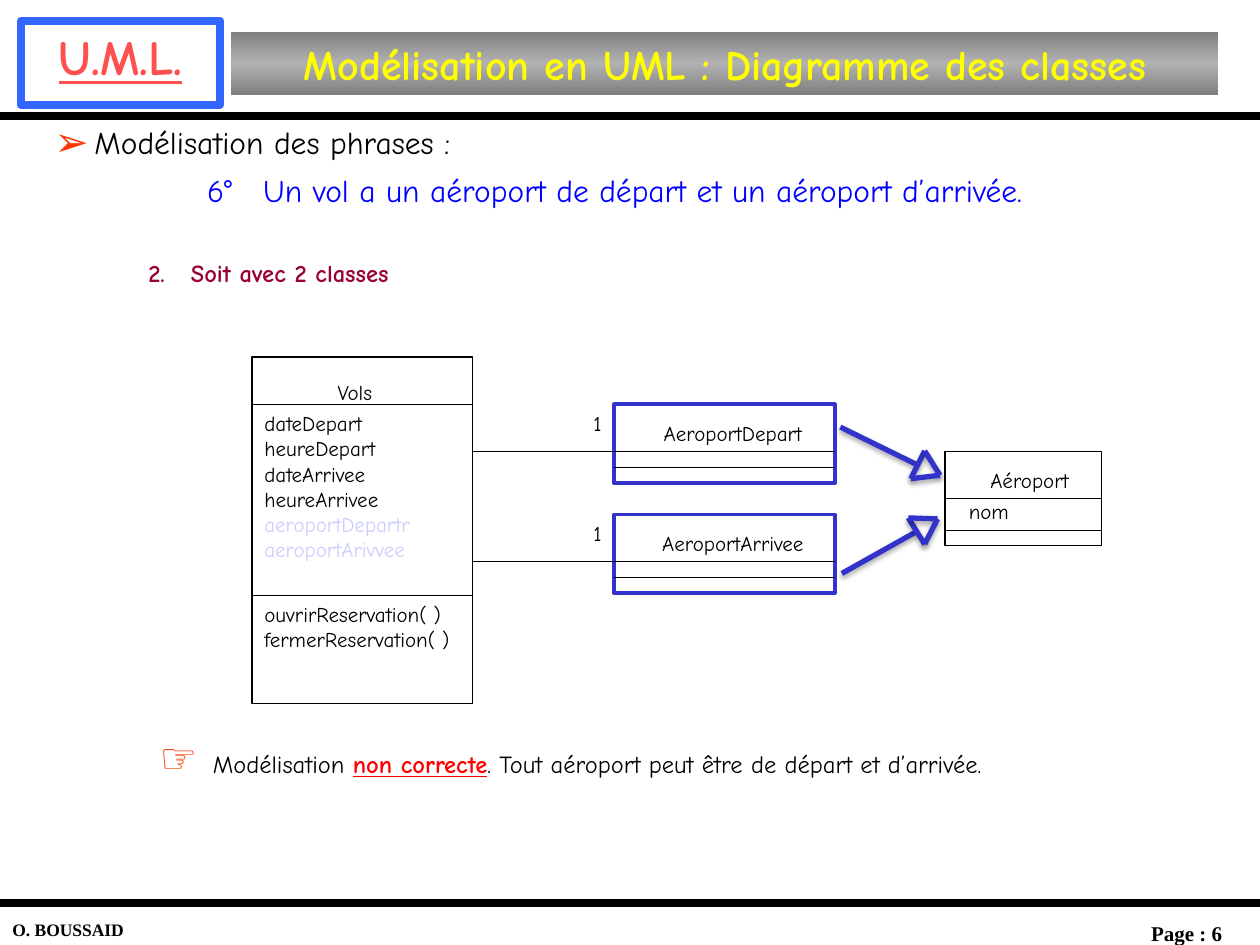
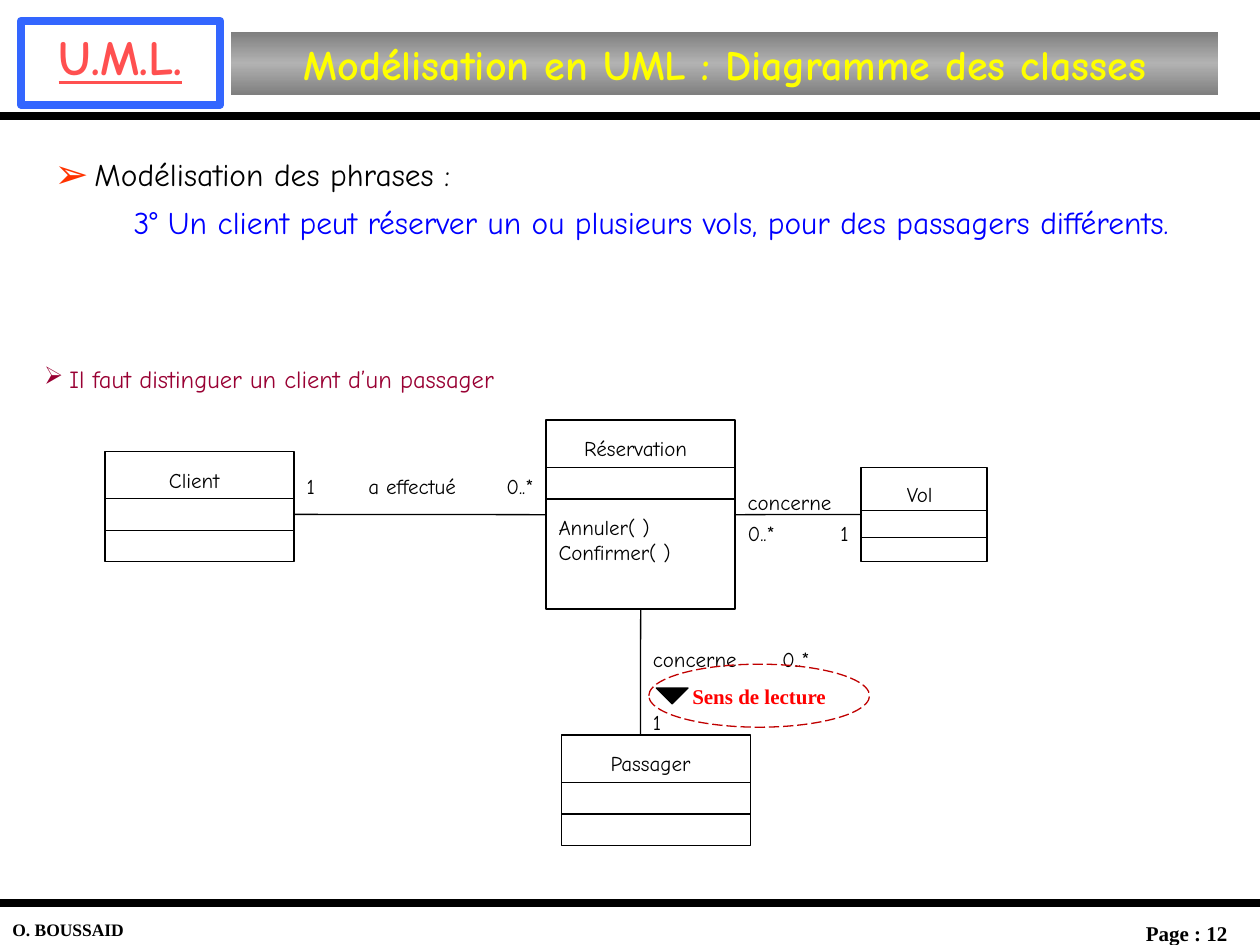
from copy import deepcopy
from dataclasses import dataclass
from itertools import combinations
from typing import NamedTuple

from lxml.etree import SubElement
from pptx import Presentation
from pptx.dml.color import RGBColor
from pptx.enum.dml import MSO_LINE_DASH_STYLE as Dash
from pptx.enum.shapes import MSO_CONNECTOR as Connector
from pptx.enum.shapes import MSO_SHAPE as Preset
from pptx.enum.text import MSO_ANCHOR as Anchor
from pptx.enum.text import MSO_AUTO_SIZE as AutoSize
from pptx.enum.text import PP_ALIGN as Align
from pptx.oxml.ns import qn
from pptx.util import Cm, Pt

COMIC, TIMES = "Comic Neue", "Times New Roman"
BLACK, WHITE, RED, ORANGE = "000000", "FFFFFF", "FF0000", "FF3300"
BLUE, INDIGO, PALE, PLUM = "0000FF", "3333CC", "CCCCFF", "990033"
SLIDE_WIDTH, SLIDE_HEIGHT = 25.4, 19.05
ARROW_BULLET = "➢"


class Run(NamedTuple):
    text: str
    size: float = 12
    color: str = BLACK
    bold: bool = False
    underline: bool = False
    font: str = COMIC


class Label(NamedTuple):
    text: str
    left: float
    top: float
    width: float = 1.27
    align: Align = Align.LEFT


class Members(NamedTuple):
    """One compartment's lines; top and left are offsets from the class box."""
    lines: list[str]
    top: float
    left: float = 0
    pale_lines: int = 0


@dataclass
class ClassBox:
    name: str
    left: float
    top: float
    width: float
    height: float
    name_shift: float
    dividers: tuple[float, float] = (0.95, 1.59)
    name_top: float = 0.32
    members: tuple[Members, ...] = ()
    outline: str = BLACK
    weight: float = 0.75


class Generalization(NamedTuple):
    start: tuple[float, float]
    end: tuple[float, float]
    head: tuple[tuple[float, float], ...]


def rgb(color: str) -> RGBColor:
    return RGBColor.from_string(color)


def add_run(paragraph, spec: Run) -> None:
    run = paragraph.add_run()
    run.text = spec.text
    font = run.font
    font.name, font.size, font.bold = spec.font, Pt(spec.size), spec.bold
    font.underline = spec.underline
    font.color.rgb = rgb(spec.color)


def indent(paragraph, margin: float, hang: float, bullet: str = "",
           bullet_color: str = "", bullet_percent: int = 100) -> None:
    properties = paragraph._p.get_or_add_pPr()
    properties.set("marL", str(Cm(margin)))
    properties.set("indent", str(-Cm(hang)))
    if not bullet:
        SubElement(properties, qn("a:buNone"))
        return
    if bullet_color:
        color = SubElement(properties, qn("a:buClr"))
        SubElement(color, qn("a:srgbClr"), val=bullet_color)
    SubElement(properties, qn("a:buSzPct"), val=str(bullet_percent * 1000))
    SubElement(properties, qn("a:buChar"), char=bullet)


def place(shape, left: float, top: float, width: float, height: float) -> None:
    shape.left, shape.top = Cm(left), Cm(top)
    shape.width, shape.height = Cm(width), Cm(height)


def add_text(slide, left: float, top: float, width: float, height: float,
             lines: list[list[Run]], align: Align = Align.LEFT, inset_top: float = 0.13):
    frame = slide.shapes.add_textbox(Cm(left), Cm(top), Cm(width), Cm(height)).text_frame
    frame.word_wrap = True
    frame.margin_top = Cm(inset_top)
    for index, runs in enumerate(lines):
        paragraph = frame.add_paragraph() if index else frame.paragraphs[0]
        paragraph.alignment = align
        for run in runs:
            add_run(paragraph, run)
    return frame


def add_shape(slide, preset: Preset, left: float, top: float, width: float, height: float,
              fill: str = "", outline: str = BLACK, weight: float = 0.75):
    shape = slide.shapes.add_shape(preset, Cm(left), Cm(top), Cm(width), Cm(height))
    shape.shadow.inherit = False
    if fill:
        shape.fill.solid()
        shape.fill.fore_color.rgb = rgb(fill)
    else:
        shape.fill.background()
    shape.line.color.rgb, shape.line.width = rgb(outline), Pt(weight)
    return shape


def add_line(slide, start: tuple[float, float], end: tuple[float, float],
             color: str = BLACK, weight: float = 0.75, shadow: bool = False):
    line = slide.shapes.add_connector(Connector.STRAIGHT, *map(Cm, start + end))
    line.line.color.rgb, line.line.width = rgb(color), Pt(weight)
    effects = SubElement(line._element.spPr, qn("a:effectLst"))
    if shadow:
        outer = SubElement(effects, qn("a:outerShdw"), blurRad=str(Pt(3.1)),
                           dist=str(Pt(1.8)), dir="5400000", rotWithShape="0")
        shade = SubElement(outer, qn("a:srgbClr"), val=BLACK)
        SubElement(shade, qn("a:alpha"), val="35000")
    return line


def add_class(slide, box: ClassBox):
    shape = add_shape(slide, Preset.RECTANGLE, box.left, box.top, box.width, box.height,
                      WHITE, box.outline, box.weight)
    for offset in box.dividers:
        y = box.top + offset
        add_line(slide, (box.left, y), (box.left + box.width, y))
    add_text(slide, box.left + box.name_shift, box.top + box.name_top, box.width, 0.64,
             [[Run(box.name)]], Align.CENTER, 0)
    for group in box.members:
        first_pale = len(group.lines) - group.pale_lines
        lines = [[Run(text, color=BLACK if index < first_pale else PALE)]
                 for index, text in enumerate(group.lines)]
        add_text(slide, box.left + group.left, box.top + group.top, box.width + 0.33,
                 0.51 * len(lines) + 0.13, lines, inset_top=0)
    return shape


def add_labels(slide, labels: list[Label]) -> None:
    for label in labels:
        add_text(slide, label.left, label.top, label.width, 0.95,
                 [[Run(label.text)]], label.align)


def add_generalization(slide, arrow: Generalization) -> None:
    for start, end in [(arrow.start, arrow.end), *combinations(arrow.head, 2)]:
        add_line(slide, start, end, INDIGO, 3, shadow=True)


def fill_title(title) -> None:
    place(title, 4.66, 0.64, 19.9, 1.27)
    title.fill.gradient()
    title.fill.gradient_angle = 90
    stops = title._element.spPr.find(".//" + qn("a:gsLst"))
    stops.append(deepcopy(stops[0]))
    shades = [(0, "7F7F7F"), (0.5, "B2B2B2"), (1, "7F7F7F")]
    for stop, (position, color) in zip(title.fill.gradient_stops, shades):
        stop.position, stop.color.rgb = position, rgb(color)
    frame = title.text_frame
    frame.auto_size, frame.vertical_anchor = AutoSize.NONE, Anchor.MIDDLE
    paragraph = frame.paragraphs[0]
    paragraph.alignment = Align.CENTER
    add_run(paragraph, Run("Modélisation en UML : Diagramme des classes", 24, "FFFF00", True))


def fill_body(body, top: float, phrase: str, margin: float, hang: float) -> None:
    place(body, 0.84, top, 24.5, 2.18)
    frame = body.text_frame
    frame.auto_size, frame.vertical_anchor = AutoSize.NONE, Anchor.TOP
    heading, sentence = frame.paragraphs[0], frame.add_paragraph()
    indent(heading, 0.81, 0.81, ARROW_BULLET, ORANGE, 130)
    heading.space_before = Pt(0)
    add_run(heading, Run("Modélisation des phrases :", 18))
    indent(sentence, margin, hang)
    sentence.space_before = Pt(5.6)
    add_run(sentence, Run(phrase, 18, BLUE))


def add_course_slide(presentation, page: int, body_top: float, phrase: str,
                     margin: float, hang: float = 0):
    """Add a slide with the course frame, its title and the sentence to model."""
    slide = presentation.slides.add_slide(presentation.slide_layouts[1])
    badge = add_shape(slide, Preset.RECTANGLE, 0.42, 0.42, 4.02, 1.69,
                      outline="3366FF", weight=4.5)
    badge.text_frame.vertical_anchor = Anchor.TOP
    paragraph = badge.text_frame.paragraphs[0]
    paragraph.alignment = Align.CENTER
    add_run(paragraph, Run("U.M.L.", 28, "FF5050", True, True))
    for y in (2.33, 18.2):
        add_line(slide, (0, y), (SLIDE_WIDTH, y), weight=4.5)
    add_text(slide, 0, 18.39, 2.97, 0.64, [[Run("O. BOUSSAID", 10, bold=True, font=TIMES)]])
    add_text(slide, 22.44, 18.42, 2.97, 0.64,
             [[Run(f"Page : {page}", 12, bold=True, font=TIMES)]], Align.CENTER)
    fill_title(slide.shapes.title)
    fill_body(slide.placeholders[1], body_top, phrase, margin, hang)
    return slide


def add_two_class_slide(presentation) -> None:
    slide = add_course_slide(
        presentation, 6, 2.36,
        "6°\tUn vol a un aéroport de départ et un aéroport d’arrivée.", 4.21, 1.13)
    option = add_text(slide, 2.74, 5.08, 6.32, 0.84,
                      [[Run("2.\tSoit avec 2 classes", 14, PLUM, True)]])
    indent(option.paragraphs[0], 0.86, 0.86)
    verdict = add_text(slide, 2.97, 14.61, 20.75, 1.27, [[
        Run("☞\t", 24, ORANGE, True),
        Run("Modélisation ", 14),
        Run("non correcte", 14, RED, True, True),
        Run(". Tout aéroport peut être de départ et d’arrivée.", 14)]])
    indent(verdict.paragraphs[0], 1.07, 1.07)

    attributes = ["dateDepart", "heureDepart", "dateArrivee", "heureArrivee",
                  "aeroportDepartr", "aeroportArivvee"]
    operations = ["ouvrirReservation( )", "fermerReservation( )"]
    add_class(slide, ClassBox(
        "Vols", 5.08, 7.2, 4.45, 6.99, -0.15, (0.95, 4.8), 0.46,
        (Members(attributes, 1.08, pale_lines=2), Members(operations, 4.93))))
    add_class(slide, ClassBox("Aéroport", 19.05, 9.1, 3.15, 1.9, 0.13,
                              members=(Members(["nom"], 0.95, 0.23),)))
    for name, top in (("AeroportDepart", 8.15), ("AeroportArrivee", 10.37)):
        add_class(slide, ClassBox(name, 12.38, top, 4.45, 1.59, 0.17, (0.95, 1.27),
                                  outline=INDIGO, weight=2))
        add_line(slide, (9.53, top + 0.95), (12.38, top + 0.95))
        add_labels(slide, [Label("1", 11.11, top, align=Align.RIGHT)])
    for arrow in (
            Generalization((16.94, 8.61), (18.49, 9.37),
                           ((18.64, 9.09), (18.36, 9.65), (18.95, 9.58))),
            Generalization((16.97, 11.56), (18.47, 10.72),
                           ((18.31, 10.44), (18.64, 10.97), (18.9, 10.46)))):
        add_generalization(slide, arrow)


def add_reservation_slide(presentation) -> None:
    slide = add_course_slide(
        presentation, 12, 3,
        "3° Un client peut réserver un ou plusieurs vols, pour des passagers différents.", 1.6)
    remark = add_text(slide, 0.64, 7.2, 23.5, 0.84,
                      [[Run("Il faut distinguer un client d’un passager", 14, PLUM)]])
    indent(remark.paragraphs[0], 0.51, 0.51, ARROW_BULLET)

    add_class(slide, ClassBox("Client", 2.12, 9.1, 3.81, 2.22, -0.11))
    reservation = add_class(slide, ClassBox(
        "Réservation", 11.01, 8.47, 3.81, 3.81, -0.1,
        members=(Members(["Annuler( )", "Confirmer( )"], 1.9),)))
    flight = add_class(slide, ClassBox("Vol", 17.36, 9.42, 2.54, 1.9, -0.09, (0.87, 1.42), 0.28))
    add_class(slide, ClassBox("Passager", 11.32, 14.82, 3.81, 2.22, -0.11))

    made = add_line(slide, (5.93, 10.37), (11.01, 10.37))
    made.end_connect(reservation, 1)
    concerns_flight = add_line(slide, (14.82, 10.37), (17.36, 10.37))
    concerns_flight.begin_connect(reservation, 3)
    concerns_flight.end_connect(flight, 1)
    concerns_passenger = add_line(slide, (12.91, 12.28), (12.91, 14.82))
    concerns_passenger.begin_connect(reservation, 2)

    add_labels(slide, [
        Label("1", 5.93, 9.42),
        Label("a effectué", 6.88, 9.42, 2.86, Align.CENTER),
        Label("0..*", 9.74, 9.42, align=Align.RIGHT),
        Label("concerne", 14.82, 9.74, 2.86),
        Label("0..*", 14.82, 10.37),
        Label("1", 16.09, 10.37, align=Align.RIGHT),
        Label("concerne", 12.91, 12.91, 2.86),
        Label("0..*", 15.52, 12.91),
        Label("1", 12.91, 14.18)])
    direction = add_shape(slide, Preset.ISOSCELES_TRIANGLE, 13.23, 13.87, 0.64, 0.32, BLACK)
    direction.rotation = 180
    reading = add_shape(slide, Preset.OVAL, 13.08, 13.39, 4.45, 1.27, outline="C00000")
    reading.line.dash_style = Dash.LONG_DASH
    reading.text_frame.word_wrap = False
    paragraph = reading.text_frame.paragraphs[0]
    paragraph.alignment = Align.CENTER
    add_run(paragraph, Run("Sens de lecture", 12, RED, True, font=TIMES))


def main() -> None:
    presentation = Presentation()
    presentation.slide_width, presentation.slide_height = Cm(SLIDE_WIDTH), Cm(SLIDE_HEIGHT)
    add_two_class_slide(presentation)
    add_reservation_slide(presentation)
    presentation.save("out.pptx")


if __name__ == "__main__":
    main()
